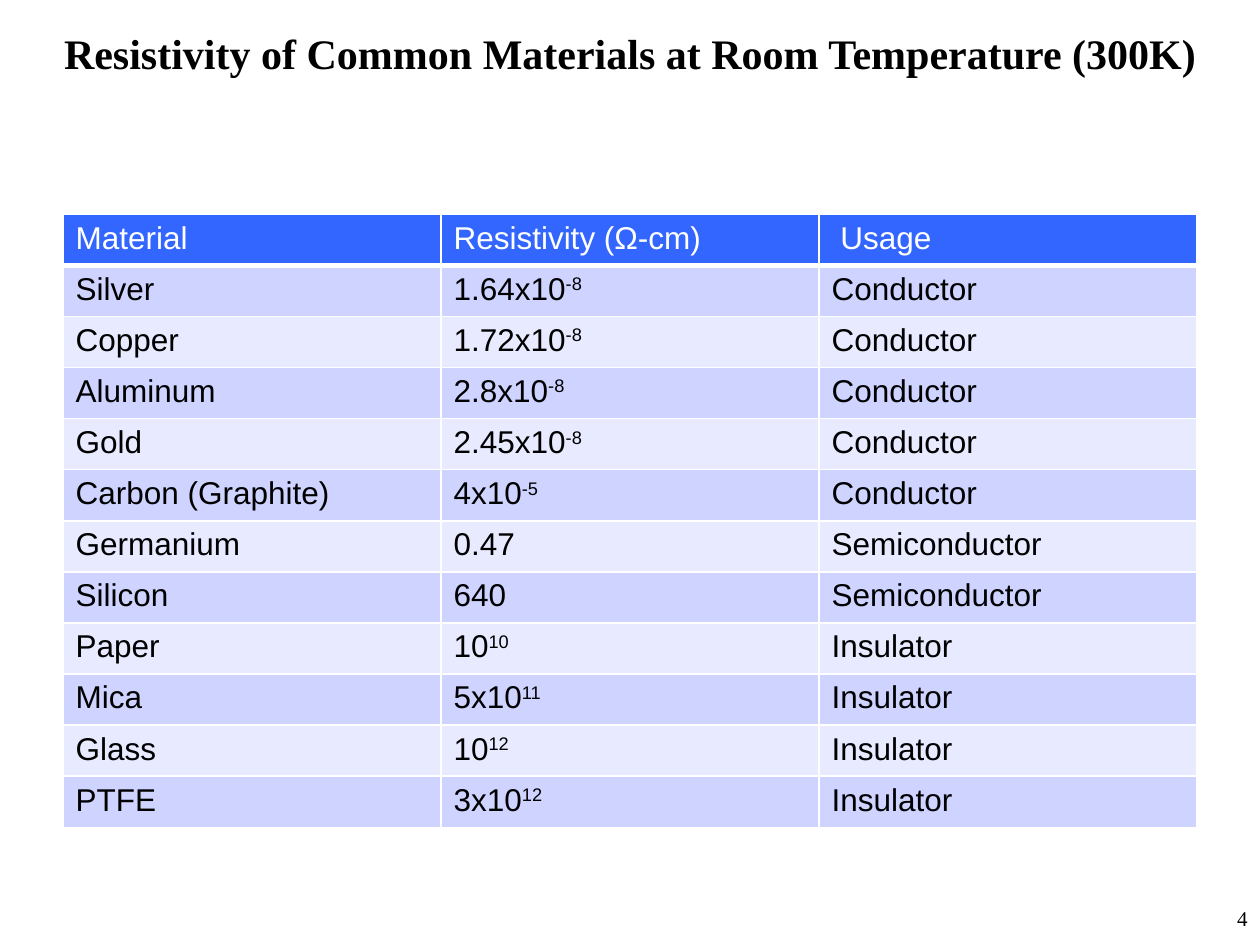
from dataclasses import dataclass

from lxml import etree
from pptx import Presentation
from pptx.dml.color import RGBColor
from pptx.enum.text import MSO_ANCHOR, PP_ALIGN
from pptx.oxml.ns import qn
from pptx.util import Inches, Pt

LEFT, CENTER, RIGHT = PP_ALIGN.LEFT, PP_ALIGN.CENTER, PP_ALIGN.RIGHT
TOP, MIDDLE = MSO_ANCHOR.TOP, MSO_ANCHOR.MIDDLE

# Content: each cell is a base text with an optional exponent
TITLE = "Resistivity of Common Materials at Room Temperature (300K)"
PAGE_NUMBER = "4"
HEADER = ("Material", "Resistivity (Ω-cm)", " Usage")
MATERIALS = [
    ("Silver", ("1.64x10", "-8"), "Conductor"),
    ("Copper", ("1.72x10", "-8"), "Conductor"),
    ("Aluminum", ("2.8x10", "-8"), "Conductor"),
    ("Gold", ("2.45x10", "-8"), "Conductor"),
    ("Carbon (Graphite)", ("4x10", "-5"), "Conductor"),
    ("Germanium", ("0.47",), "Semiconductor"),
    ("Silicon", ("640",), "Semiconductor"),
    ("Paper", ("10", "10"), "Insulator"),
    ("Mica", ("5x10", "11"), "Insulator"),
    ("Glass", ("10", "12"), "Insulator"),
    ("PTFE", ("3x10", "12"), "Insulator"),
]


@dataclass(frozen=True)
class Theme:
    serif: str = "Times New Roman"
    sans: str = "Arial"
    title_size: int = 24
    table_size: int = 18
    number_size: int = 12
    ink: str = "000000"
    paper: str = "FFFFFF"
    header: str = "3366FF"
    bands: tuple = ("CED3FF", "E8EAFF")
    thin: int = 1
    thick: int = 3


THEME = Theme()
WIDTH, HEIGHT = Inches(10), Inches(7.5)
MARGIN = WIDTH // 20
TABLE_TOP, TABLE_HEIGHT = Inches(1.7), Inches(4.87)


def add_span(para, text, font, size, color, bold=False, raised=False):
    span = para.add_run()
    span.text = text
    span.font.name = font
    span.font.size = Pt(size)
    span.font.bold = bold
    span.font.color.rgb = RGBColor.from_string(color)
    if raised:
        span.font._element.set("baseline", "30000")


def add_label(page, place, text, size, align, anchor, bold=False):
    box = page.shapes.add_textbox(*place)
    frame = box.text_frame
    frame.word_wrap = True
    frame.vertical_anchor = anchor
    para = frame.paragraphs[0]
    para.alignment = align
    add_span(para, text, THEME.serif, size, THEME.ink, bold)


def set_borders(cell, bottom):
    properties = cell._tc.get_or_add_tcPr()
    widths = {"lnL": THEME.thin, "lnR": THEME.thin, "lnT": THEME.thin, "lnB": bottom}
    for side, width in widths.items():
        line = etree.SubElement(properties, qn(f"a:{side}"), w=str(Pt(width)))
        fill = etree.SubElement(line, qn("a:solidFill"))
        etree.SubElement(fill, qn("a:srgbClr"), val=THEME.paper)


def fill_cell(cell, content, fill, color, bottom):
    set_borders(cell, bottom)
    cell.fill.solid()
    cell.fill.fore_color.rgb = RGBColor.from_string(fill)
    para = cell.text_frame.paragraphs[0]
    para.alignment = LEFT
    parts = (content,) if isinstance(content, str) else content
    for index, text in enumerate(parts):
        add_span(para, text, THEME.sans, THEME.table_size, color, raised=index > 0)


def add_materials(page):
    rows = [HEADER, *MATERIALS]
    table = page.shapes.add_table(
        len(rows), len(HEADER), MARGIN, TABLE_TOP, WIDTH - 2 * MARGIN, TABLE_HEIGHT
    ).table
    for row, contents in enumerate(rows):
        if row == 0:
            style = (THEME.header, THEME.paper, THEME.thick)
        else:
            style = (THEME.bands[(row - 1) % 2], THEME.ink, THEME.thin)
        for column, content in enumerate(contents):
            fill_cell(table.cell(row, column), content, *style)


def main():
    deck = Presentation()
    deck.slide_width, deck.slide_height = WIDTH, HEIGHT
    page = deck.slides.add_slide(deck.slide_layouts[6])

    # Title across the full width
    add_label(page, (0, 0, WIDTH, Inches(0.84)), TITLE,
              THEME.title_size, CENTER, MIDDLE, bold=True)

    # Table of materials
    add_materials(page)

    # Page number in the lower right corner
    width, height = Inches(2.08), Inches(0.36)
    add_label(page, (WIDTH - width, HEIGHT - height, width, height), PAGE_NUMBER,
              THEME.number_size, RIGHT, TOP)

    deck.save("out.pptx")


if __name__ == "__main__":
    main()
